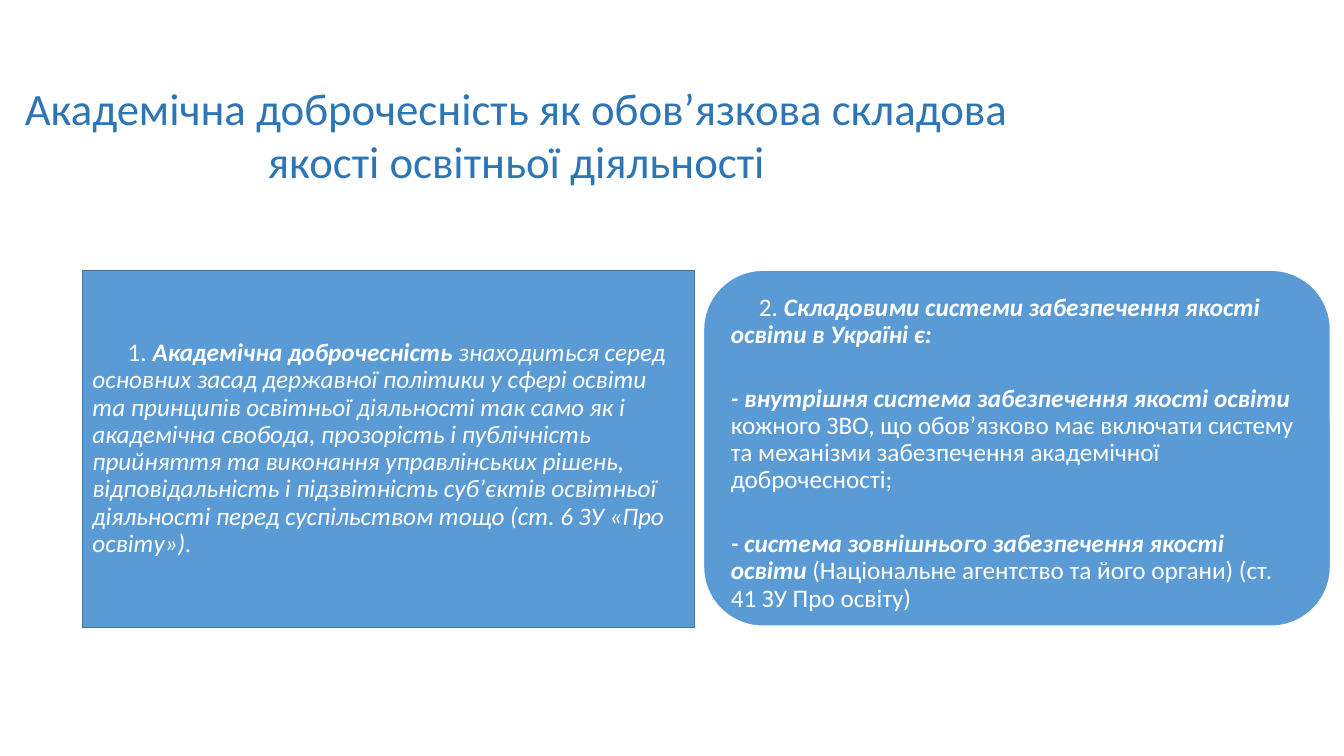
from pptx import Presentation
from pptx.dml.color import RGBColor as Rgb
from pptx.enum.shapes import MSO_SHAPE as Kind
from pptx.enum.text import MSO_ANCHOR as Anchor, PP_ALIGN as Align
from pptx.util import Cm, Pt


def tint(code):
    return Rgb.from_string(code)


def write(para, size, color, runs):
    para.font.size = Pt(size)
    para.font.name = "Calibri"
    para.font.color.rgb = tint(color)
    for text, bold, slant in runs:
        run = para.add_run()
        run.text = text
        run.font.bold = bold
        run.font.italic = slant


deck = Presentation()
deck.slide_width = Cm(33.87)
deck.slide_height = Cm(19.05)
slide = deck.slides.add_slide(deck.slide_layouts[6])

panels = [
    (Kind.RECTANGLE, 2.08, 15.42, 9, "43739E", Anchor.MIDDLE, 0.13, 0.89, [
        [("1. ", False, False),
         ("Академічна доброчесність ", True, True),
         ("знаходиться серед основних засад державної політики у сфері освіти "
          "та принципів освітньої діяльності так само як і академічна свобода, "
          "прозорість і публічність прийняття та виконання управлінських рішень, "
          "відповідальність і підзвітність суб’єктів освітньої діяльності перед "
          "суспільством тощо (ст. 6 ЗУ «Про освіту»).", False, True)],
    ]),
    (Kind.ROUNDED_RECTANGLE, 17.73, 15.8, 8.97, "FFFFFF", Anchor.TOP, 0.18, 0.71, [
        [("2. ", False, False),
         ("Складовими системи забезпечення якості освіти в Україні є:", True, True)],
        [("- внутрішня система забезпечення якості освіти ", True, True),
         ("кожного ЗВО, що обов’язково має включати систему та механізми "
          "забезпечення академічної доброчесності;", False, False)],
        [("- система зовнішнього забезпечення якості освіти ", True, True),
         ("(Національне агентство та його органи) (ст. 41 ЗУ Про освіту)", False, False)],
    ]),
]

for kind, left, width, height, edge, anchor, inset, indent, paras in panels:
    panel = slide.shapes.add_shape(kind, Cm(left), Cm(6.81), Cm(width), Cm(height))
    panel.shadow.inherit = False
    panel.fill.solid()
    panel.fill.fore_color.rgb = tint("5B9BD5")
    panel.line.color.rgb = tint(edge)
    panel.line.width = Pt(1)
    frame = panel.text_frame
    frame.word_wrap = True
    frame.vertical_anchor = anchor
    frame.margin_top = Cm(inset)
    frame.margin_bottom = Cm(0.13)
    for spot, runs in enumerate(paras):
        para = frame.add_paragraph() if spot else frame.paragraphs[0]
        para.alignment = Align.LEFT
        para.line_spacing = 0.9
        if spot:
            para.space_before = Pt(26)
        else:
            para._p.get_or_add_pPr().set("indent", str(Cm(indent)))
        write(para, 18, "FFFFFF", runs)

title = slide.shapes.add_textbox(Cm(0), Cm(1.9), Cm(26.04), Cm(3))
title.text_frame.word_wrap = True
head = title.text_frame.paragraphs[0]
head.alignment = Align.CENTER
write(head, 32, "2E75B6", [
    ("Академічна доброчесність як обов’язкова складова якості освітньої діяльності",
     False, False)])

deck.save("out.pptx")
